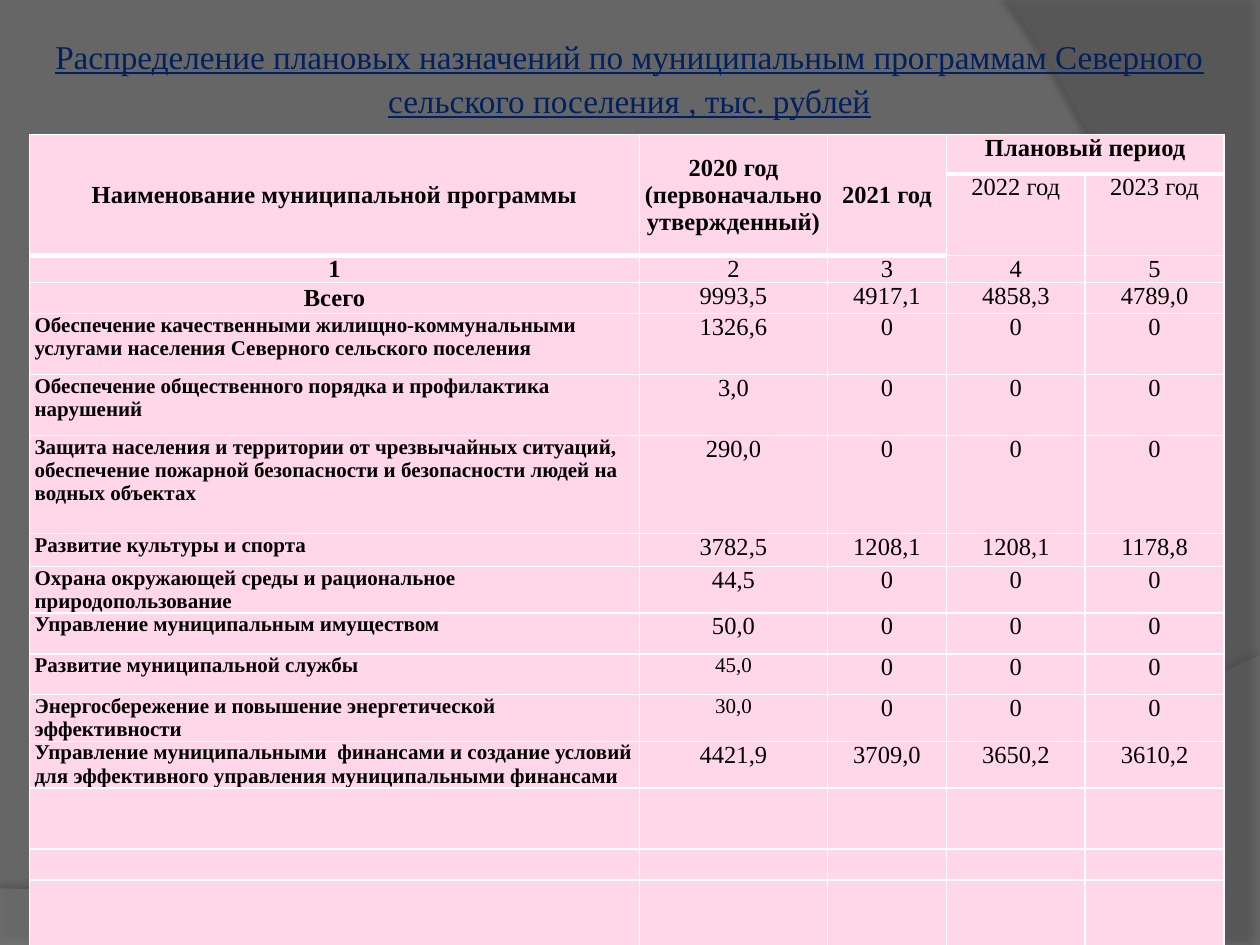
from lxml.etree import SubElement
from pptx import Presentation
from pptx.dml.color import RGBColor
from pptx.enum.text import MSO_ANCHOR as Anchor, MSO_AUTO_SIZE as AutoSize, PP_ALIGN as Align
from pptx.oxml.ns import qn
from pptx.util import Pt

FONT = "Times New Roman"
BLACK = RGBColor(0, 0, 0)
WHITE = RGBColor(255, 255, 255)
NAVY = RGBColor(0x00, 0x20, 0x60)
PINK = RGBColor(0xFF, 0xD7, 0xE8)
BACKGROUND = RGBColor(0x66, 0x66, 0x66)
WAVE = RGBColor(0x7F, 0x7F, 0x7F)
ARC = RGBColor(0x5E, 0x5E, 0x5E)

TITLE = ("Распределение плановых назначений по муниципальным программам "
         "Северного сельского поселения , тыс. рублей")
COLUMNS = [348.5, 107.5, 68, 79.3, 79.3]
HEIGHTS = [22.5, 46, 15.5, 17.7, 34.9, 34.9, 56, 18.8, 26.6,
           23.3, 23.3, 26.6, 26.6, 34.9, 17.6, 37.7]
HEADER = [
    ["Наименование муниципальной программы", "2020 год (первоначально утвержденный)",
     "2021 год", "Плановый период", ""],
    ["", "", "", "2022 год", "2023 год"],
    ["1", "2", "3", "4", "5"],
    ["Всего", "9993,5", "4917,1", "4858,3", "4789,0"],
]
ZEROS = ["0", "0", "0"]
PROGRAMS = [
    ["Обеспечение качественными жилищно-коммунальными услугами населения "
     "Северного сельского поселения", "1326,6", *ZEROS],
    ["Обеспечение общественного порядка и профилактика нарушений", "3,0", *ZEROS],
    ["Защита населения и территории от чрезвычайных ситуаций, обеспечение пожарной "
     "безопасности и безопасности людей на водных объектах", "290,0", *ZEROS],
    ["Развитие культуры и спорта", "3782,5", "1208,1", "1208,1", "1178,8"],
    ["Охрана окружающей среды и рациональное природопользование", "44,5", *ZEROS],
    ["Управление муниципальным имуществом", "50,0", *ZEROS],
    ["Развитие муниципальной службы", "45,0", *ZEROS],
    ["Энергосбережение и повышение энергетической эффективности", "30,0", *ZEROS],
    ["Управление муниципальными  финансами и создание условий для эффективного "
     "управления муниципальными финансами", "4421,9", "3709,0", "3650,2", "3610,2"],
]
ROWS = HEADER + PROGRAMS + [[""] * 5] * 3
MERGES = [((0, 0), (1, 0)), ((0, 1), (1, 1)), ((0, 2), (1, 2)), ((0, 3), (0, 4))]
HEAVY_BOTTOM = {(1, 0), (1, 1), (1, 2), (0, 3), (0, 4)}
SMALL_VALUES = {(10, 1), (11, 1)}


def curve(start, first, second, end, steps=40):
    points = []
    for step in range(1, steps + 1):
        t = step / steps
        weights = ((1 - t) ** 3, 3 * t * (1 - t) ** 2, 3 * t * t * (1 - t), t ** 3)
        controls = (start, first, second, end)
        points.append(tuple(sum(w * c[axis] for w, c in zip(weights, controls))
                            for axis in (0, 1)))
    return points


class SlideBuilder:
    """Holds the text style and the current slide, and adds its elements."""

    def __init__(self, presentation, font):
        self.font = font
        self.slide = presentation.slides.add_slide(presentation.slide_layouts[5])
        fill = self.slide.background.fill
        fill.solid()
        fill.fore_color.rgb = BACKGROUND

    def run(self, paragraph, text, size, color, bold=False, underline=False):
        run = paragraph.add_run()
        run.text = text
        font = run.font
        font.name, font.size, font.bold, font.underline = self.font, Pt(size), bold, underline
        font.color.rgb = color

    def backdrop(self, points, color, opacity, shadow_opacity, distance, angle):
        scaled = [(Pt(x), Pt(y)) for x, y in points]
        builder = self.slide.shapes.build_freeform(*scaled[0])
        builder.add_line_segments(scaled[1:], close=True)
        shape = builder.convert_to_shape()
        shape.fill.solid()
        shape.fill.fore_color.rgb = color
        shape.line.fill.background()
        shape.shadow.inherit = False
        properties = shape._element.spPr
        fill_color = properties.find(qn("a:solidFill"))[0]
        SubElement(fill_color, qn("a:alpha"), val=str(opacity * 1000))
        shadow = SubElement(properties.find(qn("a:effectLst")), qn("a:outerShdw"),
                            blurRad=str(Pt(4)), dist=str(Pt(distance)),
                            dir=str(angle * 60000), algn="ctr", rotWithShape="0")
        shadow_color = SubElement(shadow, qn("a:srgbClr"), val=str(BLACK))
        SubElement(shadow_color, qn("a:alpha"), val=str(shadow_opacity * 1000))

    def title(self, text, left, top, width, height):
        title = self.slide.shapes.title
        self.slide.shapes._spTree.append(title._element)
        title.left, title.top, title.width, title.height = map(Pt, (left, top, width, height))
        frame = title.text_frame
        frame.word_wrap = True
        frame.auto_size = AutoSize.NONE
        frame.vertical_anchor = Anchor.MIDDLE
        frame.margin_left = frame.margin_right = Pt(3.6)
        frame.margin_top = frame.margin_bottom = Pt(3.6)
        paragraph = frame.paragraphs[0]
        paragraph.alignment = Align.CENTER
        paragraph.line_spacing = 1.09
        self.run(paragraph, text, 19, NAVY, underline=True)

    def table(self, left, top):
        frame = self.slide.shapes.add_table(len(ROWS), len(COLUMNS), Pt(left), Pt(top),
                                            Pt(sum(COLUMNS)), Pt(sum(HEIGHTS)))
        table = frame.table
        table.first_row = table.horz_banding = False
        for column, width in zip(table.columns, COLUMNS):
            column.width = Pt(width)
        for row, height in zip(table.rows, HEIGHTS):
            row.height = Pt(height)
        for first, last in MERGES:
            table.cell(*first).merge(table.cell(*last))
        for row, values in enumerate(ROWS):
            for column, text in enumerate(values):
                self.cell(table.cell(row, column), row, column, text)

    def cell(self, cell, row, column, text):
        is_program = row >= len(HEADER) and column == 0
        cell.margin_left = cell.margin_right = Pt(2.9)
        cell.margin_top = cell.margin_bottom = 0
        if (row == 0 and column < 3) or (row, column) == (3, 0):
            cell.vertical_anchor = Anchor.MIDDLE
        paragraph = cell.text_frame.paragraphs[0]
        paragraph.alignment = Align.LEFT if is_program else Align.CENTER
        if text:
            size = 12 if is_program or (row, column) in SMALL_VALUES else 14
            self.run(paragraph, text, size, BLACK, bold=row == 0 or column == 0)
        else:
            SubElement(paragraph._p, qn("a:endParaRPr"), sz="1200")
        self.borders(cell, row, column)
        cell.fill.solid()
        cell.fill.fore_color.rgb = PINK

    def borders(self, cell, row, column):
        properties = cell._tc.get_or_add_tcPr()
        widths = {"L": 1, "R": 1,
                  "T": 3 if (row - 1, column) in HEAVY_BOTTOM else 1,
                  "B": 3 if (row, column) in HEAVY_BOTTOM else 1}
        for side, width in widths.items():
            line = SubElement(properties, qn(f"a:ln{side}"), w=str(Pt(width)))
            SubElement(SubElement(line, qn("a:solidFill")), qn("a:srgbClr"), val=str(WHITE))


def main():
    presentation = Presentation()
    presentation.slide_width, presentation.slide_height = Pt(720), Pt(540)
    builder = SlideBuilder(presentation, FONT)
    wave = curve((720, 374.4), (402.5, 524.9), (281.5, 517.7), (0, 507.6))
    builder.backdrop([(0, 540), (720, 540), (720, 374.4), *wave], WAVE, 45, 35, 3.5, 270)
    arc = curve((591, 540), (673.2, 445.7), (733, 216), (576, 0))
    builder.backdrop([(720, 0), (720, 540), (591, 540), *arc], ARC, 40, 45, 4, 180)
    builder.title(TITLE, 25.2, 15.1, 669, 57)
    builder.table(16.9, 77)
    presentation.save("out.pptx")


if __name__ == "__main__":
    main()
